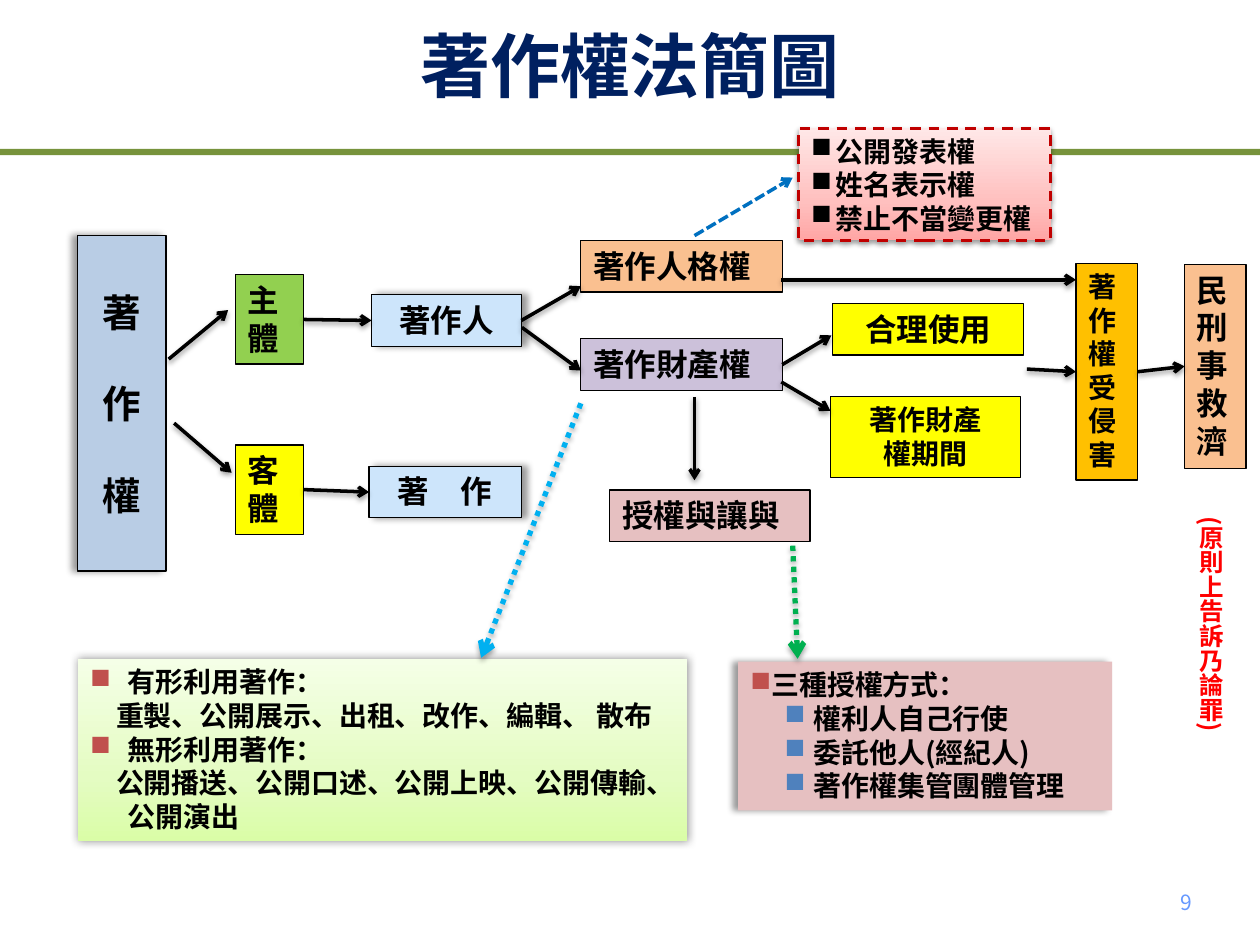
from lxml import etree
from pptx import Presentation
from pptx import util as u
from pptx.dml.color import RGBColor
from pptx.enum import dml, shapes, text
from pptx.oxml import ns

FONT = "Noto Sans CJK SC"
LEFT, CENTER, RIGHT = text.PP_ALIGN.LEFT, text.PP_ALIGN.CENTER, text.PP_ALIGN.RIGHT
TOP, MIDDLE = text.MSO_ANCHOR.TOP, text.MSO_ANCHOR.MIDDLE
SHADOW_LEFT = ("000000", 40, 4, 3, 180)
SHADOW_RIGHT = ("000000", 40, 4, 3, 0)
SHADOW_AROUND = ("000000", 40, 5, 0, 0)
SHADOW_BELOW = ("000000", 38, 3.1, 1.6, 90)
GREEN_GRADIENT = ((0, "DAFDA7"), (35, "E4FCC2"), (100, "F5FFE7"))
RED_GRADIENT = ((0, "FFA6A5"), (35, "FFC0BF"), (100, "FFE7E7"))


def color(value):
    """Turn a hex string into a colour."""
    return RGBColor.from_string(value)


def add_xml(parent, tag, **attributes):
    """Append a drawing element and return it."""
    return etree.SubElement(parent, ns.qn("a:" + tag), {k: str(v) for k, v in attributes.items()})


def apply(target, values):
    """Set attributes from a dict."""
    for name, value in values.items():
        setattr(target, name, value)


class Diagram:
    """Holds the style and the current slide."""

    def __init__(self, slide):
        """Keep the slide and the basic font format."""
        self.slide = slide
        self.font = {"name": FONT, "bold": True}

    def set_text(self, frame, lines, size, ink="000000", align=LEFT, anchor=TOP, gap=0, bold=True):
        """Fill a frame with lines of (text, margin, indent, bullet colour)."""
        apply(frame, {"word_wrap": True, "vertical_anchor": anchor})
        for number, line in enumerate(lines):
            words, margin, indent, bullet = (line, 0, 0, None) if isinstance(line, str) else line
            paragraph = frame.add_paragraph() if number else frame.paragraphs[0]
            paragraph.alignment = align
            if number and gap:
                paragraph.space_before = u.Pt(gap)
            properties = paragraph._p.get_or_add_pPr()
            properties.set("marL", str(u.Cm(margin)))
            properties.set("indent", str(u.Cm(indent)))
            if bullet:
                add_xml(add_xml(properties, "buClr"), "srgbClr", val=bullet)
                add_xml(properties, "buChar", char="■")
            run = paragraph.add_run()
            run.text = words
            apply(run.font, {**self.font, "size": u.Pt(size), "bold": bold})
            run.font.color.rgb = color(ink)
            add_xml(run._r.get_or_add_rPr(), "ea", typeface=FONT)

    def shadow(self, effects, style):
        """Put an outer shadow in an effect list."""
        ink, alpha, blur, distance, angle = style
        outer = add_xml(effects, "outerShdw", blurRad=u.Pt(blur), dist=u.Pt(distance),
                        dir=angle * 60000, rotWithShape=0)
        add_xml(add_xml(outer, "srgbClr", val=ink), "alpha", val=alpha * 1000)

    def gradient(self, shape, stops):
        """Fill a shape with a gradient rising from the bottom."""
        shape.fill.gradient()
        shape.fill.gradient_angle = 90
        stop_list = shape._element.spPr.find(ns.qn("a:gradFill")).find(ns.qn("a:gsLst"))
        for stop in list(stop_list):
            stop_list.remove(stop)
        for position, ink in stops:
            add_xml(add_xml(stop_list, "gs", pos=position * 1000), "srgbClr", val=ink)

    def box(self, place, fill, lines=(), size=18, line="000000", width=0.75, dash=None,
            shadow=None, **options):
        """Draw a rectangle with text."""
        shape = self.slide.shapes.add_shape(shapes.MSO_SHAPE.RECTANGLE, *map(u.Cm, place))
        shape.shadow.inherit = False
        if isinstance(fill, str):
            shape.fill.solid()
            shape.fill.fore_color.rgb = color(fill)
        else:
            self.gradient(shape, fill)
        if line:
            shape.line.color.rgb = color(line)
            apply(shape.line, {"width": u.Pt(width), "dash_style": dash})
        else:
            shape.line.fill.background()
        if shadow:
            self.shadow(shape._element.spPr.find(ns.qn("a:effectLst")), shadow)
        self.set_text(shape.text_frame, lines, size, **options)
        return shape

    def label(self, place, words, size, vertical=False, **options):
        """Add a text box, set upright if wanted."""
        shape = self.slide.shapes.add_textbox(*map(u.Cm, place))
        self.set_text(shape.text_frame, [words], size, **options)
        if vertical:
            shape.text_frame.auto_size = text.MSO_AUTO_SIZE.SHAPE_TO_FIT_TEXT
            shape.text_frame._txBody.bodyPr.set("vert", "eaVert")

    def title(self, place, words):
        """Place and format the slide title."""
        shape = self.slide.shapes.title
        apply(shape, dict(zip(("left", "top", "width", "height"), map(u.Cm, place))))
        self.set_text(shape.text_frame, [words], 40, ink="002060", align=CENTER)

    def arrow(self, start, end, ink="000000", width=2, dash=None, shadow=SHADOW_BELOW):
        """Draw an arrow from a point or right side to a point or left side."""
        points = [point if isinstance(point, tuple) else (0, 0) for point in (start, end)]
        connector = self.slide.shapes.add_connector(
            shapes.MSO_CONNECTOR.STRAIGHT, *(u.Cm(value) for point in points for value in point))
        if not isinstance(start, tuple):
            connector.begin_connect(start, 3)
        if not isinstance(end, tuple):
            connector.end_connect(end, 1)
        connector.line.color.rgb = color(ink)
        apply(connector.line, {"width": u.Pt(width), "dash_style": dash})
        add_xml(connector.line._get_or_add_ln(), "tailEnd", type="arrow")
        effects = add_xml(connector._element.spPr, "effectLst")
        if shadow:
            self.shadow(effects, shadow)


def main():
    """Build the copyright law diagram."""
    presentation = Presentation()
    presentation.slide_width, presentation.slide_height = u.Cm(25.4), u.Cm(19.05)
    diagram = Diagram(presentation.slides.add_slide(presentation.slide_layouts[5]))
    box, arrow = diagram.box, diagram.arrow

    box((0, 3, 25.4, 0.13), "77933C", line=None)
    diagram.title((1.27, 0.33, 22.86, 2.44), "著作權法簡圖")
    box((1.57, 4.75, 1.78, 6.76), "B9CDE5", ["著", "作", "權"], 22, shadow=SHADOW_LEFT,
        align=CENTER, anchor=MIDDLE, gap=26)
    subject = box((4.75, 5.54, 1.37, 1.8), "92D050", ["主體"])
    target = box((4.75, 8.97, 1.37, 1.8), "FFFF00", ["客體"])
    author = box((7.49, 5.94, 3.02, 1.04), "CDE5FB", ["著作人"], shadow=SHADOW_RIGHT, align=CENTER)
    work = box((7.44, 9.4, 3.07, 1.04), "CDE5FB", ["著　作"], shadow=SHADOW_RIGHT, align=CENTER)
    box((11.71, 4.85, 4.06, 1.04), "FAC090", ["著作人格權"])
    property_right = box((11.71, 6.83, 4.06, 1.04), "CCC1DA", ["著作財產權"])
    box((12.29, 9.88, 4.04, 1.04), "E6C0C1", ["授權與讓與"])
    box((16.79, 6.12, 3.84, 1.04), "FFFF00", ["合理使用"], align=CENTER)
    box((16.74, 8, 3.84, 1.63), "FFFF00", ["著作財產", "權期間"], 16, align=CENTER)
    infringement = box((21.69, 5.31, 1.24, 4.37), "FFC000", ["著作權受侵害"], 16)
    remedy = box((23.88, 5.33, 1.24, 4.11), "FAC090", ["民刑事救濟"])

    box((1.57, 13.28, 12.29, 3.68), GREEN_GRADIENT, [
        ("有形利用著作：", 0.76, -0.76, "C0504D"),
        ("重製、公開展示、出租、改作、編輯、 散布", 0.76, -0.24, None),
        ("無形利用著作：", 0.76, -0.76, "C0504D"),
        ("公開播送、公開口述、公開上映、公開傳輸、公開演出", 0.76, -0.24, None),
    ], 16, line=None, shadow=SHADOW_AROUND)
    licences = ["權利人自己行使", "委託他人(經紀人)", "著作權集管團體管理"]
    box((14.88, 13.34, 7.54, 3), "E6C0C1",
        [("三種授權方式：", 0, 0, "C0504D")] + [(words, 1.27, -0.58, "4F81BD") for words in licences],
        16, line=None, shadow=SHADOW_LEFT)
    moral_rights = ["公開發表權", "姓名表示權", "禁止不當變更權"]
    box((16.1, 2.59, 5.08, 2.26), RED_GRADIENT,
        [(words, 0.5, -0.5, "000000") for words in moral_rights], 16, line="C00000", width=1.5,
        dash=dml.MSO_LINE.DASH, shadow=SHADOW_BELOW, anchor=MIDDLE)

    for start, end in (
        ((3.51, 8.53), (4.67, 9.53)),
        ((3.4, 7.24), (4.6, 6.25)),
        (subject, author),
        (target, work),
        (author, (11.71, 5.77)),
        ((10.52, 6.6), (11.71, 7.47)),
        ((14, 8), (14, 9.68)),
        (property_right, (16.76, 6.76)),
        ((15.75, 7.7), (16.74, 8.28)),
        ((15.75, 5.64), (21.69, 5.64)),
        ((20.7, 7.44), infringement),
        (infringement, remedy),
    ):
        arrow(start, end)
    dots = {"width": 3, "dash": dml.MSO_LINE.ROUND_DOT, "shadow": ("000000", 35, 3.1, 1.8, 90)}
    arrow((11.71, 8.13), (9.7, 13.26), "00B0F0", **dots)
    arrow((15.98, 11), (16.08, 13.28), "00B050", **dots)
    arrow((14, 4.75), (15.98, 3.58), "0070C0", dash=dml.MSO_LINE.SQUARE_DOT, shadow=None)

    diagram.label((23.72, 10.16, 1.12, 4.95), "(原則上告訴乃論罪)", 14, vertical=True,
                  ink="FF0000", align=CENTER)
    diagram.label((18.36, 17.68, 5.92, 1.02), "9", 12, ink="6699FF", align=RIGHT,
                  anchor=MIDDLE, bold=False)
    presentation.save("out.pptx")


if __name__ == "__main__":
    main()
